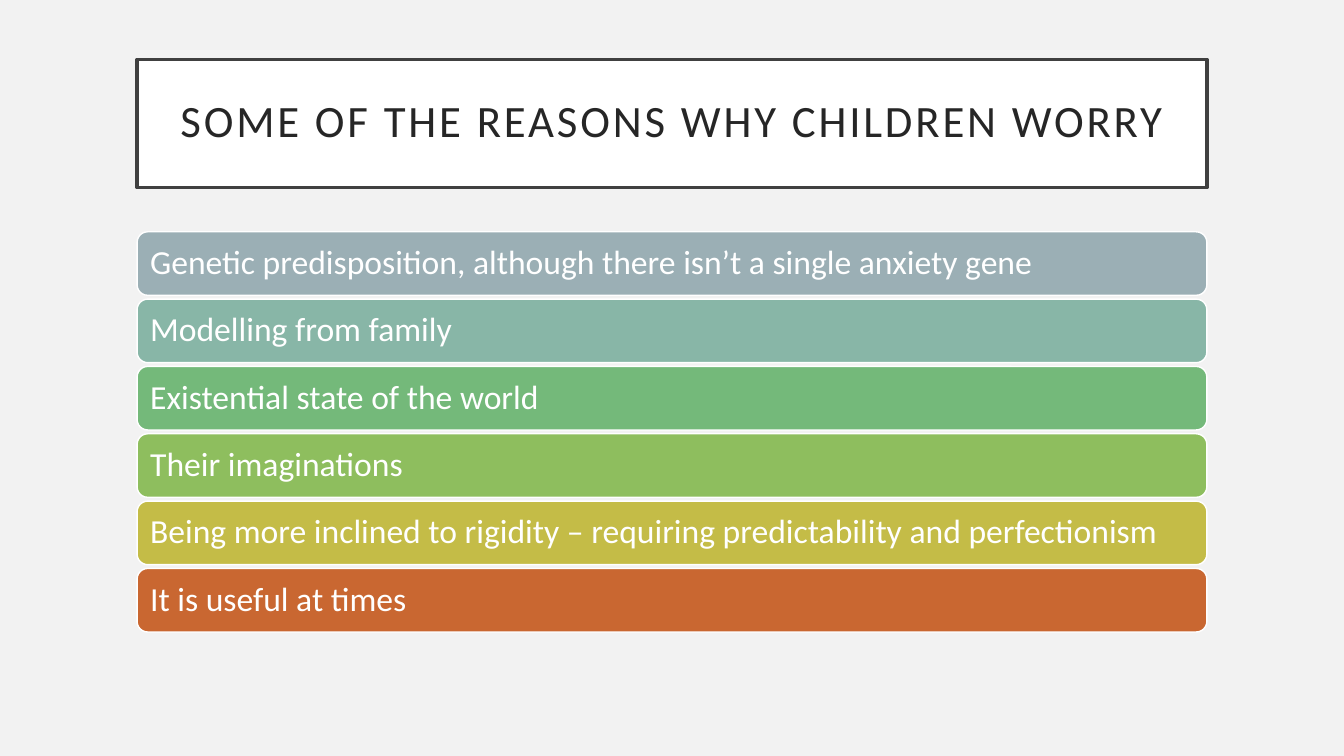
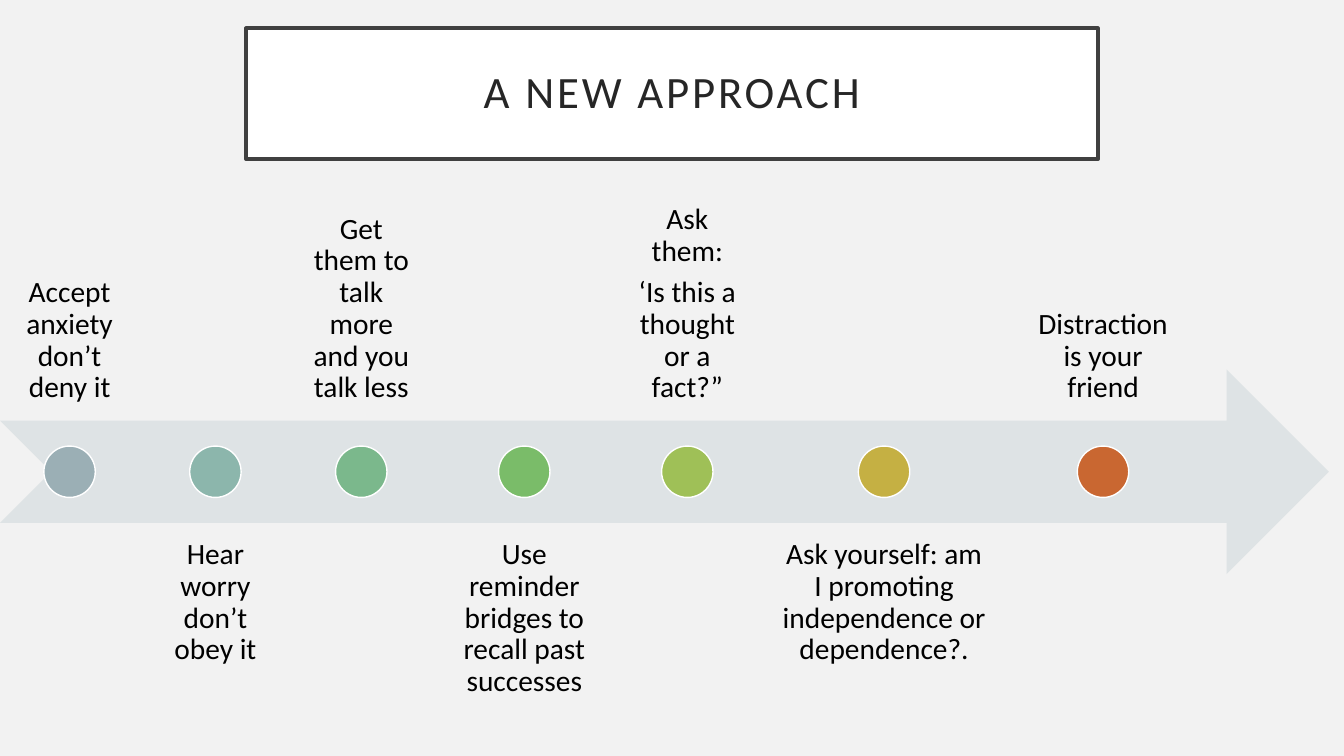
from dataclasses import dataclass

from pptx import Presentation
from pptx.dml.color import RGBColor
from pptx.enum.shapes import MSO_SHAPE
from pptx.enum.text import MSO_ANCHOR, PP_ALIGN
from pptx.util import Inches, Pt

RECT, ROUND = MSO_SHAPE.RECTANGLE, MSO_SHAPE.ROUNDED_RECTANGLE
OVAL, ARROW = MSO_SHAPE.OVAL, MSO_SHAPE.NOTCHED_RIGHT_ARROW
TOP, MIDDLE, BOTTOM = MSO_ANCHOR.TOP, MSO_ANCHOR.MIDDLE, MSO_ANCHOR.BOTTOM
LEFT, CENTER = PP_ALIGN.LEFT, PP_ALIGN.CENTER


@dataclass(frozen=True)
class Theme:
    font: str = "Calibri"
    back: str = "F2F2F2"
    white: str = "FFFFFF"
    frame: str = "404040"
    title: str = "262626"
    ink: str = "000000"
    arrow: str = "DEE3E5"
    bars: tuple = ("9BAFB5", "88B6A7", "74B97A", "8EBE5E", "C4BC47", "C96731")
    dots: tuple = ("9BAFB5", "8CB6AC", "7BB88C", "7ABC69", "9FC057", "C5B043",
                   "C96731")
    title_size: int = 32
    bar_size: int = 24
    label_size: int = 21


class Deck:
    def __init__(self, theme):
        self.theme = theme
        self.prs = Presentation()
        self.prs.slide_width = Inches(13.33)
        self.prs.slide_height = Inches(7.5)
        self.slide = None

    def start(self):
        self.slide = self.prs.slides.add_slide(self.prs.slide_layouts[6])
        fill = self.slide.background.fill
        fill.solid()
        fill.fore_color.rgb = RGBColor.from_string(self.theme.back)

    def shape(self, kind, box, fill, line=None, width=1):
        item = self.slide.shapes.add_shape(kind, *map(Inches, box))
        item.shadow.inherit = False
        item.fill.solid()
        item.fill.fore_color.rgb = RGBColor.from_string(fill)
        if line:
            item.line.color.rgb = RGBColor.from_string(line)
            item.line.width = Pt(width)
        else:
            item.line.fill.background()
        return item

    def text(self, item, words, size, color, inset, anchor, align, track=0):
        frame = item.text_frame
        frame.text = words
        frame.word_wrap = True
        frame.vertical_anchor = anchor
        frame.margin_left = frame.margin_right = Inches(inset)
        frame.margin_top = frame.margin_bottom = Inches(inset)
        for index, para in enumerate(frame.paragraphs):
            para.alignment = align
            para.line_spacing = 0.9
            if index:
                para.space_before = Pt(7)
            for run in para.runs:
                run.font.name = self.theme.font
                run.font.size = Pt(size)
                run.font.color.rgb = RGBColor.from_string(color)
                if track:
                    # Letter spacing, in hundredths of a point
                    run._r.get_or_add_rPr().set("spc", str(track * 100))

    def title(self, words, box):
        look = self.theme
        item = self.shape(RECT, box, look.white, look.frame, 2.5)
        self.text(item, words, look.title_size, look.title, 0.2, MIDDLE,
                  CENTER, track=2)

    def bar(self, words, box, fill):
        look = self.theme
        item = self.shape(ROUND, box, fill, look.white)
        self.text(item, words, look.bar_size, look.white, 0.1, MIDDLE, LEFT)

    def label(self, words, box, anchor):
        item = self.slide.shapes.add_textbox(*map(Inches, box))
        self.text(item, words, self.theme.label_size, self.theme.ink, 0.16,
                  anchor, CENTER)

    def dot(self, mid, y, size, fill):
        box = (mid - size / 2, y - size / 2, size, size)
        self.shape(OVAL, box, fill, self.theme.white)


REASONS = (
    "Genetic predisposition, although there isn’t a single anxiety gene",
    "Modelling from family",
    "Existential state of the world",
    "Their imaginations",
    "Being more inclined to rigidity – requiring predictability and perfectionism",
    "It is useful at times",
)

# Label text and column width
STEPS = (
    ("Accept anxiety don’t deny it", 1.38),
    ("Hear worry don’t obey it", 1.38),
    ("Get them to talk more and you talk less", 1.38),
    ("Use reminder bridges to recall past successes", 1.72),
    ("Ask them:\n‘Is this a thought or a fact?”", 1.38),
    ("Ask yourself: am I promoting independence or dependence?.", 2.39),
    ("Distraction is your friend", 1.82),
)


def reasons(deck):
    left, width = 1.36, 10.61
    top, high, last = 2.3, 0.63, 5.64
    pitch = (last - top) / (len(REASONS) - 1)
    deck.start()
    deck.title("SOME OF THE REASONS WHY CHILDREN WORRY",
               (left, 0.59, width, 1.27))
    for row, (words, fill) in enumerate(zip(REASONS, deck.theme.bars)):
        deck.bar(words, (left, top + row * pitch, width, high), fill)


def approach(deck):
    high, above, below = 2.03, 2.14, 5.19
    axis = (above + below + high) / 2
    gap = 0.4 / (len(STEPS) - 1)
    deck.start()
    deck.title("A NEW APPROACH", (2.44, 0.28, 8.45, 1.3))
    deck.shape(ARROW, (0, axis - high / 2, 13.18, high), deck.theme.arrow)

    # Labels alternate above and below the arrow
    left = 0
    for index, ((words, width), fill) in enumerate(zip(STEPS, deck.theme.dots)):
        top, anchor = (below, TOP) if index % 2 else (above, BOTTOM)
        deck.label(words, (left, top, width, high), anchor)
        deck.dot(left + width / 2, axis, 0.51, fill)
        left += width + gap


def main():
    deck = Deck(Theme())
    reasons(deck)
    approach(deck)
    deck.prs.save("out.pptx")


if __name__ == "__main__":
    main()
